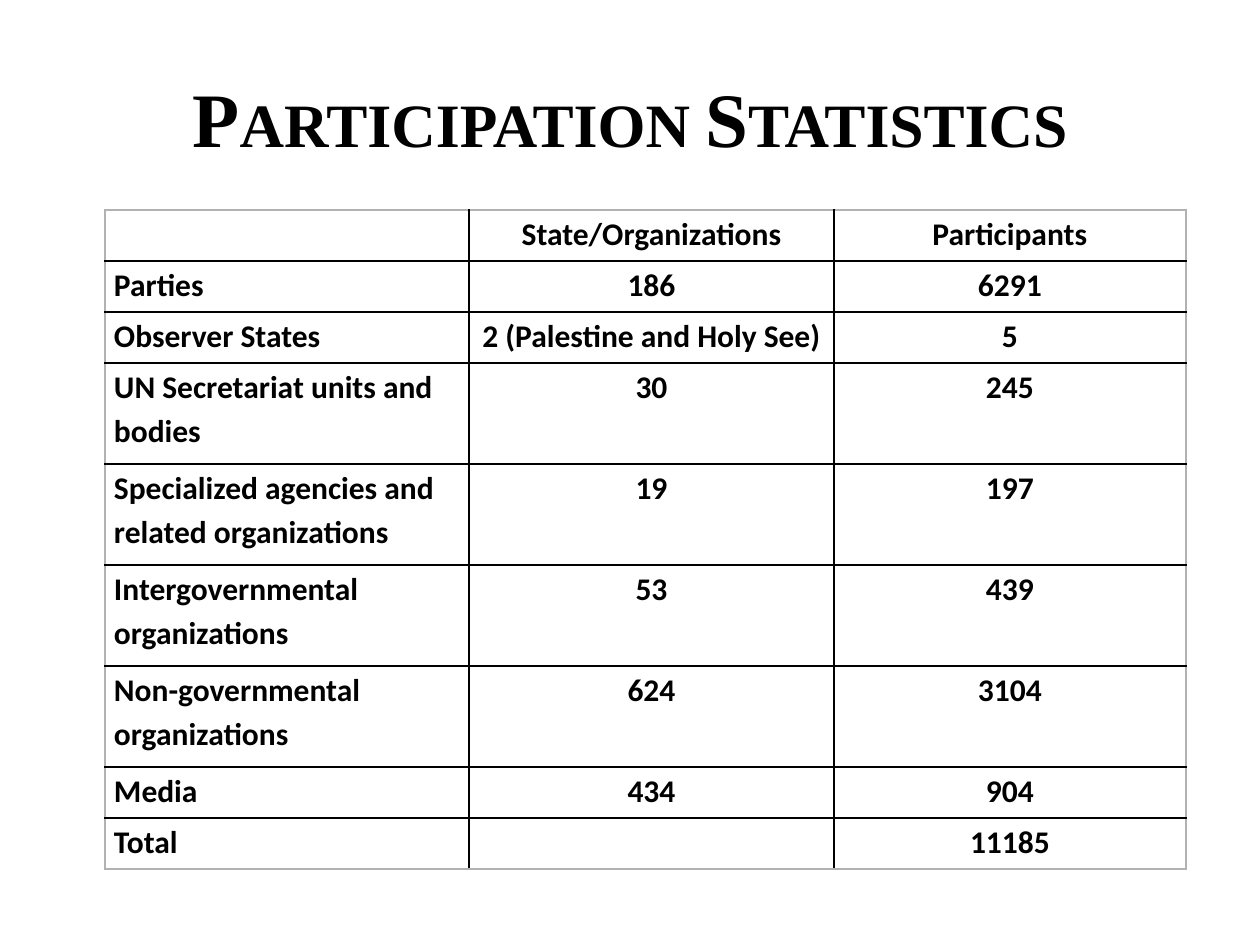
from typing import NamedTuple

from lxml.etree import SubElement
from pptx import Presentation
from pptx.dml.color import RGBColor
from pptx.enum.text import MSO_ANCHOR as Anchor, PP_ALIGN as Align
from pptx.oxml.ns import qn
from pptx.util import Emu, Pt

PX_PER_INCH = 126
BLACK, WHITE, GREY = "000000", "FFFFFF", "B2B2B2"
COLUMN_WIDTHS = (364, 365, 352)
ROW_HEIGHT, TALL_ROW_HEIGHT = 51, 101


class Category(NamedTuple):
    name: str
    organizations: str
    participants: str
    height: int = ROW_HEIGHT


ROWS = (
    Category("", "State/Organizations", "Participants"),
    Category("Parties", "186", "6291"),
    Category("Observer States", "2 (Palestine and Holy See)", "5"),
    Category("UN Secretariat units and bodies", "30", "245", TALL_ROW_HEIGHT),
    Category("Specialized agencies and related organizations", "19", "197", TALL_ROW_HEIGHT),
    Category("Intergovernmental organizations", "53", "439", TALL_ROW_HEIGHT),
    Category("Non-governmental organizations", "624", "3104", TALL_ROW_HEIGHT),
    Category("Media", "434", "904"),
    Category("Total", "", "11185"),
)


def px(length: int) -> Emu:
    return Emu(round(length * 914400 / PX_PER_INCH))


def color(value: str) -> RGBColor:
    return RGBColor.from_string(value)


def set_text(paragraph, text: str, font_name: str, size: int, alignment) -> None:
    paragraph.text = text
    paragraph.alignment = alignment
    font = paragraph.font
    font.name, font.size, font.bold = font_name, Pt(size), True
    font.color.rgb = color(BLACK)


def add_title(slide, text: str) -> None:
    frame = slide.shapes.add_textbox(px(63), px(38), px(1134), px(157)).text_frame
    frame.word_wrap = True
    frame.vertical_anchor = Anchor.MIDDLE
    paragraph = frame.paragraphs[0]
    set_text(paragraph, text, "Times New Roman", 44, Align.CENTER)
    paragraph._p.get_or_add_pPr().get_or_add_defRPr().set("cap", "small")


def set_borders(cell, outer_sides: dict[str, bool]) -> None:
    """Draw each side in grey on the table's edge and in black inside it."""
    properties = cell._tc.get_or_add_tcPr()
    for side, is_outer in outer_sides.items():
        line = SubElement(properties, qn(f"a:{side}"), w=str(Pt(1)))
        fill = SubElement(line, qn("a:solidFill"))
        SubElement(fill, qn("a:srgbClr"), val=GREY if is_outer else BLACK)


def add_statistics(slide, rows: tuple[Category, ...]) -> None:
    table = slide.shapes.add_table(
        len(rows), len(COLUMN_WIDTHS), px(105), px(210),
        px(sum(COLUMN_WIDTHS)), px(sum(row.height for row in rows)),
    ).table
    table.first_row = table.horz_banding = False
    for column, width in zip(table.columns, COLUMN_WIDTHS):
        column.width = px(width)
    last_row, last_column = len(rows) - 1, len(COLUMN_WIDTHS) - 1
    for r, row in enumerate(rows):
        table.rows[r].height = px(row.height)
        for c, text in enumerate((row.name, row.organizations, row.participants)):
            cell = table.cell(r, c)
            cell.margin_left = cell.margin_right = px(9)
            cell.margin_top = cell.margin_bottom = 0
            paragraph = cell.text_frame.paragraphs[0]
            set_text(paragraph, text, "Calibri", 18, Align.CENTER if c else Align.LEFT)
            paragraph.line_spacing = 1.15
            set_borders(cell, {"lnL": c == 0, "lnR": c == last_column,
                               "lnT": r == 0, "lnB": r == last_row})
            cell.fill.solid()
            cell.fill.fore_color.rgb = color(WHITE)


def main() -> None:
    presentation = Presentation()
    presentation.slide_width, presentation.slide_height = px(1260), px(945)
    slide = presentation.slides.add_slide(presentation.slide_layouts[6])
    add_title(slide, "Participation Statistics")
    add_statistics(slide, ROWS)
    presentation.save("out.pptx")


if __name__ == "__main__":
    main()
